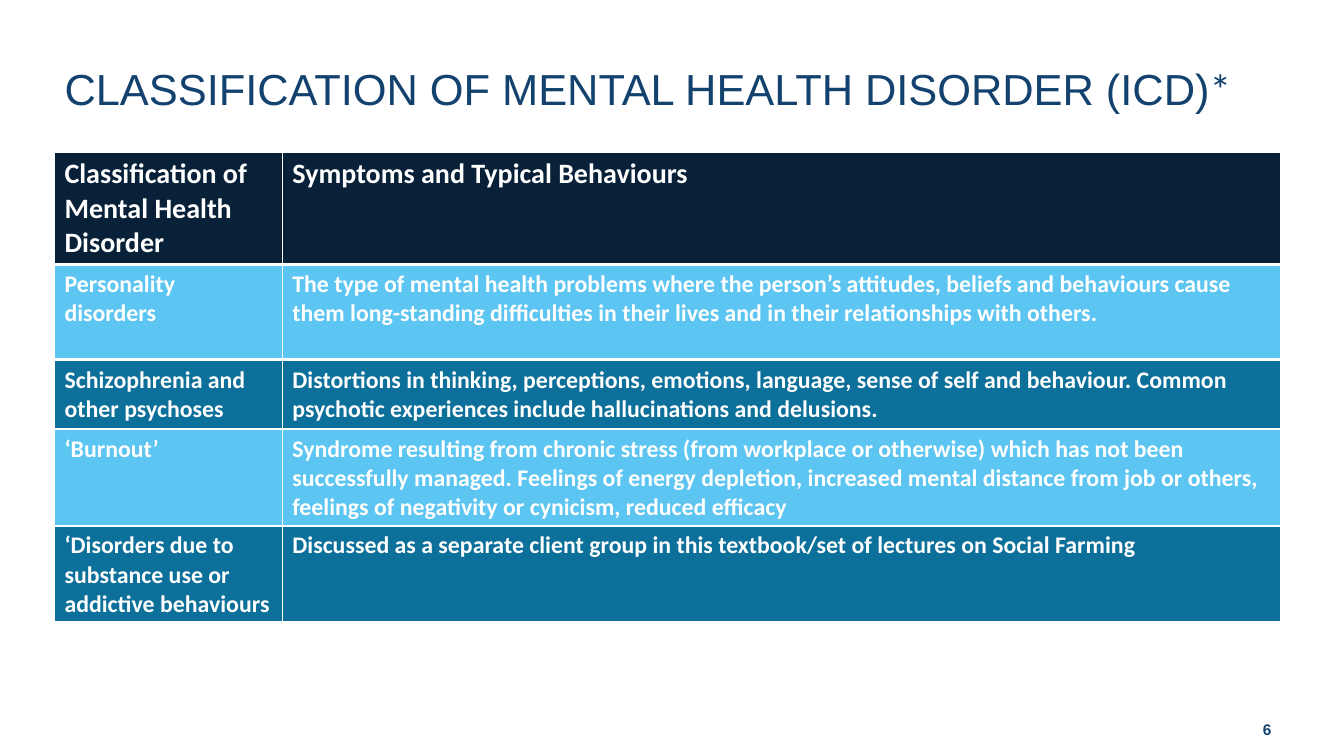
from lxml import etree
from pptx import Presentation
from pptx.dml.color import RGBColor
from pptx.enum.text import MSO_ANCHOR, PP_ALIGN
from pptx.oxml.ns import qn
from pptx.util import Inches, Pt

LEFT, RIGHT = PP_ALIGN.LEFT, PP_ALIGN.RIGHT
TOP, BOTTOM = MSO_ANCHOR.TOP, MSO_ANCHOR.BOTTOM

COLORS = {
    "title": "13426F",
    "header": "092138",
    "light": "5DC5F1",
    "dark": "0D709A",
    "white": "FFFFFF",
}
COLUMN_WIDTHS = (2.26, 9.9)
TABLE_LEFT = 0.54

# top, height, fill, text size, classification, symptoms
DISORDER_ROWS = [
    (1.51, 1.1, "header", 20, "Classification of Mental Health Disorder",
     "Symptoms and Typical Behaviours"),
    (2.63, 0.93, "light", 17, "Personality disorders",
     "The type of mental health problems where the person’s attitudes, beliefs "
     "and behaviours cause them long-standing difficulties in their lives and "
     "in their relationships with others."),
    (3.58, 0.67, "dark", 17, "Schizophrenia and other psychoses",
     "Distortions in thinking, perceptions, emotions, language, sense of self "
     "and behaviour. Common psychotic experiences include hallucinations and "
     "delusions."),
    (4.26, 0.95, "light", 17, "‘Burnout’",
     "Syndrome resulting from chronic stress (from workplace or otherwise) "
     "which has not been successfully managed. Feelings of energy depletion, "
     "increased mental distance from job or others, feelings of negativity or "
     "cynicism, reduced efficacy"),
    (5.22, 0.95, "dark", 17,
     "‘Disorders due to substance use or addictive behaviours",
     "Discussed as a separate client group in this textbook/set of lectures on "
     "Social Farming"),
]


def add_run(paragraph, text, size=17, font="Calibri", color="white", bold=False):
    run = paragraph.add_run()
    run.text = text
    run.font.size = Pt(size)
    run.font.name = font
    run.font.bold = bold
    run.font.color.rgb = RGBColor.from_string(COLORS[color])


class SlideBuilder:
    def __init__(self, slide):
        self.slide = slide

    def text_box(self, box, margins, spacing, align=LEFT, anchor=TOP):
        """Add an empty text box and return its first paragraph."""
        frame = self.slide.shapes.add_textbox(*map(Inches, box)).text_frame
        frame.word_wrap = True
        frame.vertical_anchor = anchor
        (frame.margin_left, frame.margin_top,
         frame.margin_right, frame.margin_bottom) = map(Inches, margins)
        paragraph = frame.paragraphs[0]
        paragraph.alignment = align
        paragraph.line_spacing = Pt(spacing)
        return paragraph

    def borders(self, cell):
        properties = cell._tc.get_or_add_tcPr()
        for side in ("lnL", "lnR", "lnT", "lnB"):
            line = etree.SubElement(properties, qn(f"a:{side}"), w=str(Pt(1)))
            fill = etree.SubElement(line, qn("a:solidFill"))
            etree.SubElement(fill, qn("a:srgbClr"), val=COLORS["white"])

    def row_table(self, top, height, fill, size, *texts):
        """Add a one-row table with a cell for each text."""
        table = self.slide.shapes.add_table(
            1, len(texts), Inches(TABLE_LEFT), Inches(top),
            Inches(sum(COLUMN_WIDTHS)), Inches(height)).table
        table.horz_banding = False
        for column, (width, text) in enumerate(zip(COLUMN_WIDTHS, texts)):
            table.columns[column].width = Inches(width)
            cell = table.cell(0, column)
            self.borders(cell)
            cell.fill.solid()
            cell.fill.fore_color.rgb = RGBColor.from_string(COLORS[fill])
            add_run(cell.text_frame.paragraphs[0], text, size=size, bold=True)


def main():
    presentation = Presentation()
    presentation.slide_width = Inches(13.33)
    presentation.slide_height = Inches(7.5)
    builder = SlideBuilder(
        presentation.slides.add_slide(presentation.slide_layouts[6]))

    # Title
    title = builder.text_box((0.64, 0.61, 11.99, 1.12), (0, 0.05, 0.1, 0.05), 34)
    add_run(title, "CLASSIFICATION OF MENTAL HEALTH DISORDER (ICD)",
            size=31, font="Arial", color="title")
    add_run(title, "*", size=31, color="title")

    # Disorder tables
    for row in DISORDER_ROWS:
        builder.row_table(*row)

    # Page number
    page_number = builder.text_box((10.32, 6.89, 3, 0.6), (0, 0.05, 0.71, 0.16),
                                   13.3, align=RIGHT, anchor=BOTTOM)
    add_run(page_number, "6", size=11, font="Arial", color="title", bold=True)

    presentation.save("out.pptx")


if __name__ == "__main__":
    main()
